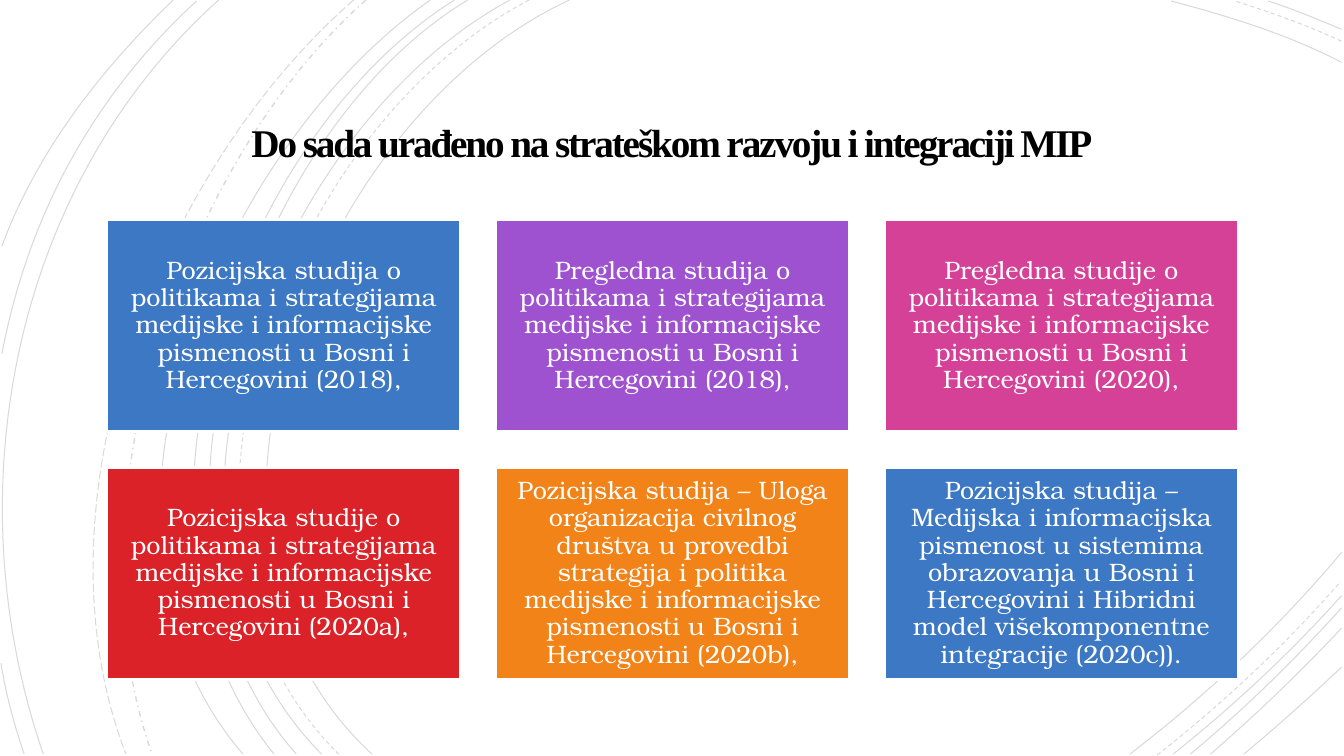
from lxml.etree import SubElement
from pptx import Presentation
from pptx.dml.color import RGBColor
from pptx.enum.dml import MSO_LINE
from pptx.enum.shapes import MSO_SHAPE
from pptx.enum.text import MSO_ANCHOR, MSO_AUTO_SIZE, PP_ALIGN
from pptx.oxml.ns import qn
from pptx.util import Pt

RECT = MSO_SHAPE.RECTANGLE
CENTER = PP_ALIGN.CENTER
MIDDLE = MSO_ANCHOR.MIDDLE
FIXED = MSO_AUTO_SIZE.NONE
SOLID, DASH = MSO_LINE.SOLID, MSO_LINE.DASH
DOTTED, LONG = MSO_LINE.DASH_DOT, MSO_LINE.LONG_DASH

WIDE, HIGH = 960, 540
TITLE = "Do sada urađeno na strateškom razvoju i integraciji MIP"
HEAD = {"name": "Times New Roman", "size": Pt(28), "bold": True}
BODY = {"name": "TeX Gyre Bonum", "size": Pt(18), "bold": False}

# Dash, then start, two control points and end of each arc
ARCS = [
    (SOLID, (406.8, 0), (226.8, 82.8), (103, 388.8), (265.7, 538.6)),
    (SOLID, (958.3, 44.6), (920.2, 24.5), (877, 11.5), (836.6, 0.7)),
    (SOLID, (807.1, 538.6), (861.8, 496.8), (913.7, 447.8), (958.3, 394.6)),
    (DASH, (378, 0), (205.2, 90), (88.6, 386.6), (241.9, 538.6)),
    (DASH, (958.3, 29.5), (933.8, 18), (907.2, 8.6), (882, 0.7)),
    (DASH, (826.6, 539.3), (873.4, 502.6), (918, 460.8), (957.6, 415.4)),
    (SOLID, (364.3, 0), (194.4, 91.4), (79.2, 386.6), (229.7, 538.6)),
    (SOLID, (958.3, 20.9), (941, 13.7), (923.8, 6.5), (905.8, 0.7)),
    (SOLID, (838.1, 538.6), (880.6, 504.7), (921.6, 466.6), (958.3, 425.5)),
    (SOLID, (334.1, 0), (175.7, 95.8), (79.2, 389.5), (211.7, 538.6)),
    (SOLID, (850.3, 538.6), (888.5, 506.9), (924.5, 471.6), (958.3, 434.2)),
    (SOLID, (324.7, 0), (166.3, 99.4), (69.8, 383.8), (195.8, 538.6)),
    (SOLID, (864.7, 538.6), (897.1, 510.5), (928.8, 480.2), (958.3, 448.6)),
    (SOLID, (307.4, 0), (156.2, 105.8), (38.2, 380.9), (173.5, 538.6)),
    (SOLID, (888.5, 538.6), (912.2, 519.1), (935.3, 498.2), (958.3, 476.6)),
    (DOTTED, (261.4, 0), (126.7, 119.5), (46.8, 366.5), (108.7, 538.6)),
    (LONG, (252.7, 0), (113, 121.7), (20.9, 359.3), (90, 538.6)),
    (SOLID, (156.2, 0), (7.9, 133.2), (-33.1, 352.8), (31, 538.6)),
    (SOLID, (140.4, 0.7), (66.2, 69.1), (20.2, 154.1), (1.4, 252.7)),
    (SOLID, (0.7, 473.8), (4.3, 496.1), (10.1, 517.7), (17.3, 538.6)),
    (SOLID, (123.8, 0), (72, 49.7), (26.6, 108), (1.4, 175.7)),
]

THEME = "politikama i strategijama medijske i informacijske pismenosti u Bosni i Hercegovini"
CARDS = [
    ("3C78C3", f"Pozicijska studija o {THEME} (2018),"),
    ("9F52D0", f"Pregledna studija o {THEME} (2018),"),
    ("D64198", f"Pregledna studije o {THEME} (2020),"),
    ("DA2228", f"Pozicijska studije o {THEME} (2020a),"),
    ("F18318", "Pozicijska studija – Uloga organizacija civilnog društva u provedbi "
               "strategija i politika medijske i informacijske pismenosti u Bosni i "
               "Hercegovini (2020b),"),
    ("3C78C3", "Pozicijska studija – Medijska i informacijska pismenost u sistemima "
               "obrazovanja u Bosni i Hercegovini i Hibridni model višekomponentne "
               "integracije (2020c))."),
]


def color(code):
    return RGBColor.from_string(code)


def apply(item, style):
    for key, value in style.items():
        setattr(item, key, value)


def write(shape, text, style, tint, inset, space):
    frame = shape.text_frame
    apply(frame, {"word_wrap": True, "auto_size": FIXED, "vertical_anchor": MIDDLE})
    for side in ("left", "top", "right", "bottom"):
        setattr(frame, f"margin_{side}", Pt(inset))
    para = frame.paragraphs[0]
    apply(para, {"alignment": CENTER, "line_spacing": space})
    run = para.add_run()
    run.text = text
    apply(run.font, style)
    run.font.color.rgb = color(tint)
    return run


# One faint curve, offset from the box corner
def draw_arc(slide, left, top, dash, points):
    spots = [(Pt(left + x), Pt(top + y)) for x, y in points]
    pen = slide.shapes.build_freeform(*spots[0])
    pen.add_line_segments(spots[1:], close=False)
    arc = pen.convert_to_shape()
    arc.shadow.inherit = False
    arc.fill.background()
    arc.line.color.rgb = color("000000")
    apply(arc.line, {"width": Pt(1 if dash == DOTTED else 0.75), "dash_style": dash})

    # Turn the three segments into one cubic curve
    track = arc._element.find(".//" + qn("a:path"))
    steps = track.findall(qn("a:lnTo"))
    curve = SubElement(track, qn("a:cubicBezTo"))
    for step in steps:
        curve.append(step[0])
        track.remove(step)
    ink = arc._element.spPr.find(".//" + qn("a:srgbClr"))
    SubElement(ink, qn("a:alpha")).set("val", "15000")


# Background curves
def add_arcs(slide, left, top):
    for dash, *points in ARCS:
        draw_arc(slide, left, top, dash, points)


# Title
def add_title(slide, left, top, width, height):
    title = slide.shapes.title
    apply(title, {"left": Pt(left), "top": Pt(top),
                  "width": Pt(width), "height": Pt(height)})
    run = write(title, TITLE, HEAD, "000000", 18, 0.85)
    run._r.get_or_add_rPr().set("spc", "-150")


# Grid of study cards
def add_cards(slide, left, top, width, height, cols=3, rows=2, gap=25.2):
    wide = (width - gap * (cols - 1)) / cols
    high = (height - gap * (rows - 1)) / rows
    for i, (tint, text) in enumerate(CARDS):
        row, col = divmod(i, cols)
        card = slide.shapes.add_shape(
            RECT, Pt(left + col * (wide + gap)), Pt(top + row * (high + gap)),
            Pt(wide), Pt(high))
        card.shadow.inherit = False
        card.fill.solid()
        card.fill.fore_color.rgb = color(tint)
        card.line.color.rgb = color("FFFFFF")
        card.line.width = Pt(2)
        write(card, text, BODY, "FFFFFF", 5.4, 0.9)


def main():
    deck = Presentation()
    apply(deck, {"slide_width": Pt(WIDE), "slide_height": Pt(HIGH)})
    slide = deck.slides.add_slide(deck.slide_layouts[5])
    slide.background.fill.solid()
    slide.background.fill.fore_color.rgb = color("FFFFFF")
    add_arcs(slide, 0, 0)
    add_title(slide, 138.4, 62.6, 683.2, 82.8)
    add_cards(slide, 76.4, 156.9, 808, 328.4)
    deck.save("out.pptx")


if __name__ == "__main__":
    main()
